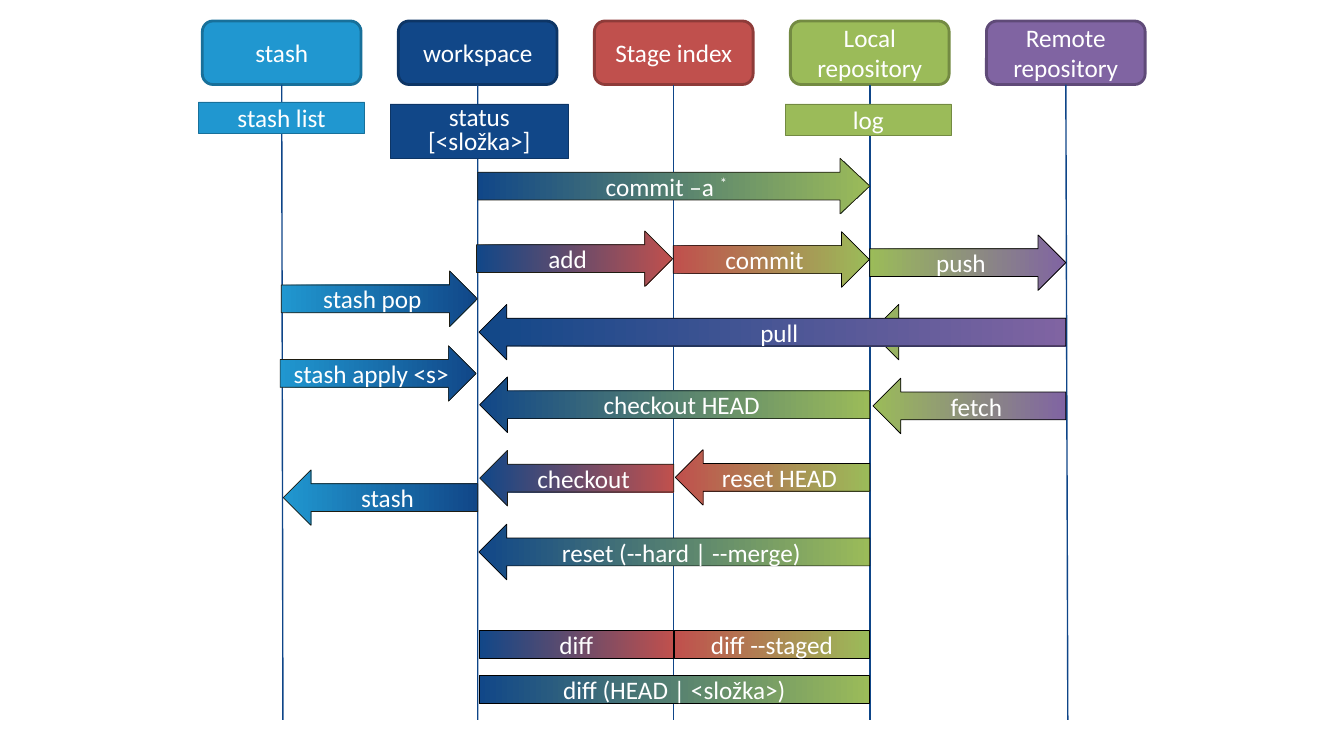
from dataclasses import dataclass
from lxml.etree import SubElement
from pptx import Presentation
from pptx.dml.color import RGBColor
from pptx.enum.shapes import MSO_CONNECTOR, MSO_SHAPE
from pptx.enum.text import MSO_ANCHOR, PP_ALIGN
from pptx.oxml.ns import qn
from pptx.util import Cm, Pt


@dataclass(frozen=True)
class Theme:
    font: str = "Calibri"
    size: int = 18
    text: str = "FFFFFF"
    lane: str = "0E4588"
    ink: str = "1E1C11"
    black: str = "000000"
    fills: tuple = ("2097D0", "114788", "C0504D", "9BBB59", "8064A2")
    edges: tuple = ("18709A", "0D3565", "8E3B39", "738A42", "5F4A78")
    thin: float = 0.5
    thick: float = 2


THEME = Theme()
FIRST, STEP = 7.1, 4.94
HEAD_TOP, HEAD_WIDE, HEAD_HIGH = 0.53, 4, 1.6
LANE_END = 18.14
RIGHT, LEFT, BAR = MSO_SHAPE.RIGHT_ARROW, MSO_SHAPE.LEFT_ARROW, MSO_SHAPE.RECTANGLE
HIGH = {RIGHT: 1.4, LEFT: 1.4, BAR: 0.71}

HEADS = [
    ("stash", 0.03),
    ("workspace", 0),
    ("Stage index", 0),
    ("Local repository", 0),
    ("Remote repository", 0.05),
]

LABELS = [
    ("stash list", 0, 5, 2.57, 4.19, 0.79, None),
    ("log", 3, 19.79, 2.62, 4.19, 0.79, None),
    ("status [<složka>]", 1, 9.83, 2.62, 4.5, 1.37, 0.8),
]

STEPS = [
    ("add", RIGHT, 1, 2, 5.82, -0.03, THEME.ink),
    ("commit –a ", RIGHT, 1, 3, 3.99, 0, THEME.ink),
    ("commit", RIGHT, 2, 3, 5.84, -0.01, THEME.black),
    ("push", RIGHT, 3, 4, 5.92, 0, THEME.black),
    ("fetch", LEFT, 3, 4, 9.53, 0.08, THEME.black),
    ("stash", LEFT, 0, 1, 11.84, 0.04, THEME.ink),
    ("stash pop", RIGHT, 0, 1, 6.83, -0.01, THEME.ink),
    ("checkout", LEFT, 1, 2, 11.35, 0.05, THEME.ink),
    ("reset HEAD", LEFT, 2, 3, 11.33, 0.04, THEME.black),
    ("checkout HEAD", LEFT, 1, 3, 9.5, 0.05, THEME.black),
    ("diff", BAR, 1, 2, 15.88, 0.03, THEME.black),
    ("diff --staged", BAR, 2, 3, 15.88, 0.01, THEME.black),
    ("diff (HEAD | <složka>)", BAR, 1, 3, 17.02, 0.03, THEME.black),
    ("reset (--hard | --merge)", LEFT, 1, 3, 13.21, 0.03, THEME.black),
    ("stash apply <s>", RIGHT, 0, 1, 8.71, -0.04, THEME.ink),
    ("pull", LEFT, 1, 4, 7.67, 0.03, THEME.black),
]


def lane_x(lane):
    return FIRST + STEP * lane


class Chart:
    def __init__(self, slide, theme):
        self.slide = slide
        self.theme = theme

    def shape(self, kind, x, y, wide, high, edge, weight, text, space=None):
        box = self.slide.shapes.add_shape(kind, Cm(x), Cm(y), Cm(wide), Cm(high))
        box.shadow.inherit = False
        box.line.color.rgb = RGBColor.from_string(edge)
        box.line.width = Pt(weight)
        if text:
            frame = box.text_frame
            frame.word_wrap = True
            frame.vertical_anchor = MSO_ANCHOR.MIDDLE
            para = frame.paragraphs[0]
            para.add_run().text = text
            para.alignment = PP_ALIGN.CENTER
            para.line_spacing = space
            para.font.name = self.theme.font
            para.font.size = Pt(self.theme.size)
            para.font.color.rgb = RGBColor.from_string(self.theme.text)
        return box

    def solid(self, kind, lane, x, y, wide, high, weight, text, space=None):
        edge = self.theme.edges[lane]
        box = self.shape(kind, x, y, wide, high, edge, weight, text, space)
        box.fill.solid()
        box.fill.fore_color.rgb = RGBColor.from_string(self.theme.fills[lane])
        return box

    def head(self, lane, text):
        return self.solid(
            MSO_SHAPE.FLOWCHART_ALTERNATE_PROCESS, lane, lane_x(lane) - HEAD_WIDE / 2,
            HEAD_TOP, HEAD_WIDE, HEAD_HIGH, self.theme.thick, text)

    def label(self, text, lane, x, y, wide, high, space):
        self.solid(BAR, lane, x, y, wide, high, self.theme.thin, text, space)

    def line(self, lane, head, drift):
        x = lane_x(lane)
        link = self.slide.shapes.add_connector(
            MSO_CONNECTOR.STRAIGHT, Cm(x), Cm(HEAD_TOP + HEAD_HIGH),
            Cm(x + drift), Cm(LANE_END))
        link.begin_connect(head, 2)
        link.line.color.rgb = RGBColor.from_string(self.theme.lane)
        link.line.width = Pt(1)
        SubElement(link._element.spPr, qn("a:effectLst"))

    def step(self, text, kind, start, end, y, nudge, edge):
        wide = STEP * (end - start) - max(nudge, 0)
        box = self.shape(kind, lane_x(start) + nudge, y, wide, HIGH[kind],
                         edge, self.theme.thin, text)
        box.fill.gradient()
        box.fill.gradient_angle = 0
        for stop, lane in zip(box.fill.gradient_stops, (start, end)):
            stop.color.rgb = RGBColor.from_string(self.theme.fills[lane])
        return box

    def star(self, box):
        box.adjustments[1] = 0.534
        run = box.text_frame.paragraphs[0].add_run()
        run.text = "*"
        run._r.get_or_add_rPr().set("baseline", "30000")


def main():
    deck = Presentation()
    deck.slide_width, deck.slide_height = Cm(33.87), Cm(19.05)
    chart = Chart(deck.slides.add_slide(deck.slide_layouts[6]), THEME)
    chart.step("", LEFT, 3, 4, 7.67, 0.03, THEME.black)
    heads = [chart.head(lane, text) for lane, (text, drift) in enumerate(HEADS)]
    for lane, (text, drift) in enumerate(HEADS):
        chart.line(lane, heads[lane], drift)
    for label in LABELS:
        chart.label(*label)
    boxes = {step[0]: chart.step(*step) for step in STEPS}
    chart.star(boxes["commit –a "])
    deck.save("out.pptx")


if __name__ == "__main__":
    main()
